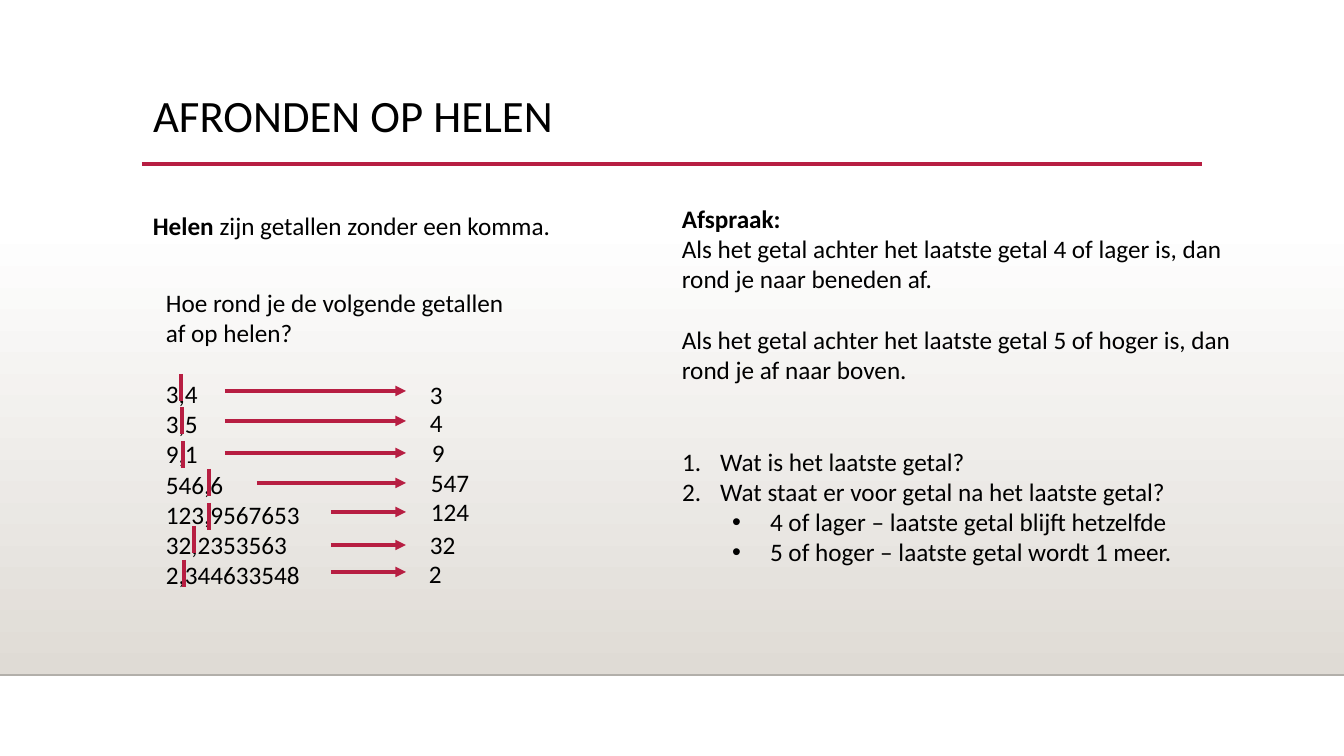
from lxml import etree
from pptx import Presentation
from pptx import util as u
from pptx.dml.color import RGBColor
from pptx.enum import shapes, text
from pptx.oxml.ns import qn

PX = 914400 / 100.8
BLACK = RGBColor(0, 0, 0)
WHITE = RGBColor(255, 255, 255)
SAND = RGBColor(0xDF, 0xDB, 0xD5)
EDGE = RGBColor(0xB2, 0xAF, 0xAA)
RED = RGBColor(0xB7, 0x1E, 0x42)
FONT = "Calibri"
LINE_GAP = 22
ARROW_END = 406
MARK_HEIGHT = 27

ROUNDINGS = [
    ("3,4", (225, 391), "3", (420, 374), (181, 374)),
    ("3,5", (225, 421), "4", (420, 402), (182, 407)),
    ("9,1", (225, 453), "9", (422, 432), (183, 441)),
    ("546,6", (257, 483), "547", (421, 462), (209, 469)),
    ("123,9567653", (331, 512), "124", (421, 491), (209, 503)),
    ("32,2353563", (331, 545), "32", (420, 524), (194, 526)),
    ("2,344633548", (331, 572), "2", (419, 553), (184, 560)),
]

STEPS = [
    ("Wat is het laatste getal?", 0),
    ("Wat staat er voor getal na het laatste getal?", 0),
    ("4 of lager – laatste getal blijft hetzelfde", 1),
    ("5 of hoger – laatste getal wordt 1 meer.", 1),
]


def emu(*lengths):
    return [u.Emu(round(length * PX)) for length in lengths]


def style(para, size=18, gap=0):
    para.space_before = u.Pt(gap)
    para.font.name = FONT
    para.font.size = u.Pt(size)
    para.font.color.rgb = BLACK


def add_text(page, area, paragraphs):
    box = page.shapes.add_textbox(*emu(*area))
    frame = box.text_frame
    frame.word_wrap = True
    for index, (spans, gap) in enumerate(paragraphs):
        para = frame.paragraphs[0] if index == 0 else frame.add_paragraph()
        for words, bold in spans:
            span = para.add_run()
            span.text = words
            if bold:
                span.font.bold = True
        style(para, gap=gap)


def add_line(page, start, end, color=RED, width=2.5, arrow=False):
    line = page.shapes.add_connector(
        shapes.MSO_CONNECTOR.STRAIGHT, *emu(*start, *end))
    line.line.color.rgb = color
    line.line.width = u.Pt(width)
    if arrow:
        etree.SubElement(line.line._get_or_add_ln(), qn("a:tailEnd"), type="triangle")
    etree.SubElement(line.element.spPr, qn("a:effectLst"))


def add_backdrop(page):
    band = page.shapes.add_shape(
        shapes.MSO_SHAPE.RECTANGLE, *emu(0, 223, 1344, 452))
    band.shadow.inherit = False
    band.line.fill.background()
    band.fill.gradient()
    band.fill.gradient_angle = 270
    for stop, color, position in zip(band.fill.gradient_stops, (WHITE, SAND), (0, 1)):
        stop.color.rgb = color
        stop.position = position
    page.shapes.title.element.addprevious(band.element)
    add_line(page, (0, 675), (1344, 675), EDGE, 1)
    add_line(page, (142, 164), (1202, 164))


def place(holder, area):
    holder.left, holder.top, holder.width, holder.height = emu(*area)
    frame = holder.text_frame
    frame.word_wrap = True
    frame.auto_size = text.MSO_AUTO_SIZE.NONE
    frame.vertical_anchor = text.MSO_ANCHOR.TOP
    return frame


def fill_title(page, words):
    para = place(page.shapes.title, (143, 89, 1058, 116)).paragraphs[0]
    para.text = words
    para.alignment = text.PP_ALIGN.LEFT
    para.line_spacing = 0.9
    style(para, 32)


def fill_steps(page):
    frame = place(page.placeholders[1], (672, 441, 528, 163))
    for index, (words, level) in enumerate(STEPS):
        para = frame.paragraphs[0] if index == 0 else frame.add_paragraph()
        para.text = words
        para.level = level
        props = para._p.get_or_add_pPr()
        margin, hanging = emu(88 if level else 38, -38)
        props.set("marL", str(margin))
        props.set("indent", str(hanging))
        if level:
            etree.SubElement(props, qn("a:buFont"), typeface="Arial")
            etree.SubElement(props, qn("a:buChar"), char="•")
        else:
            etree.SubElement(props, qn("a:buFont"), typeface="+mj-lt")
            etree.SubElement(props, qn("a:buAutoNum"), type="arabicPeriod")
        style(para)


def add_roundings(page):
    question = "Hoe rond je de volgende getallen af op helen?"
    numbers = [([(row[0], False)], 0 if index else LINE_GAP)
               for index, row in enumerate(ROUNDINGS)]
    add_text(page, (156, 282, 378, 316), [([(question, False)], 0)] + numbers)
    for _, start, answer, corner, mark in ROUNDINGS:
        add_line(page, start, (ARROW_END, start[1]), arrow=True)
        add_text(page, (*corner, 76, 40), [([(answer, False)], 0)])
        add_line(page, mark, (mark[0], mark[1] + MARK_HEIGHT))


def main():
    deck = Presentation()
    deck.slide_width, deck.slide_height = emu(1344, 756)
    page = deck.slides.add_slide(deck.slide_layouts[1])
    add_backdrop(page)
    fill_title(page, "AFRONDEN OP HELEN")
    add_text(page, (143, 205, 429, 40), [
        ([("Helen", True), (" zijn getallen zonder een komma.", False)], 0)])
    add_roundings(page)
    add_text(page, (672, 198, 574, 194), [
        ([("Afspraak:", True)], 0),
        ([("Als het getal achter het laatste getal 4 of lager is, "
           "dan rond je naar beneden af.", False)], 0),
        ([("Als het getal achter het laatste getal 5 of hoger is, "
           "dan rond je af naar boven.", False)], LINE_GAP)])
    fill_steps(page)
    deck.save("out.pptx")


if __name__ == "__main__":
    main()
